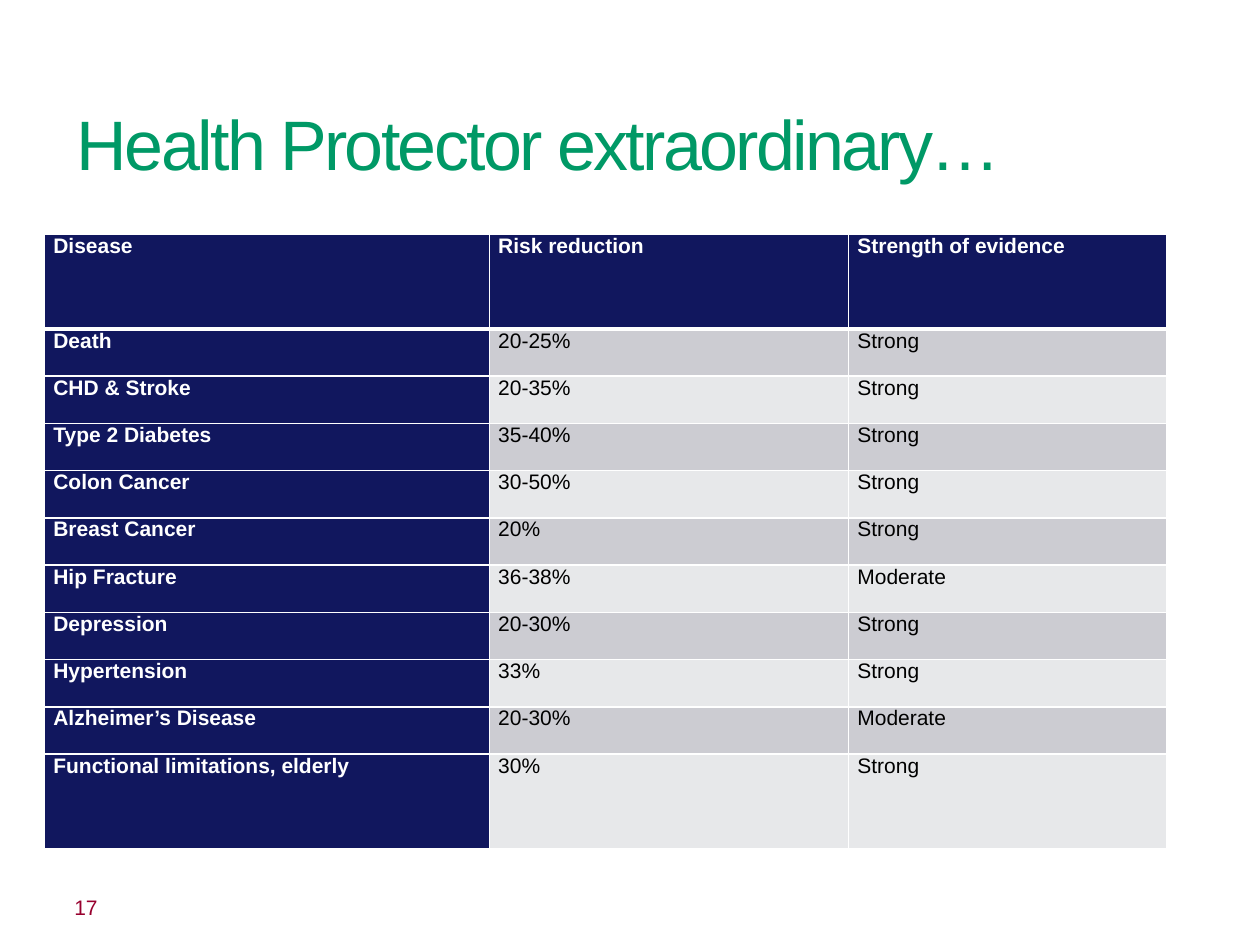
from dataclasses import dataclass

from lxml.etree import SubElement
from pptx import Presentation
from pptx.dml.color import RGBColor as Color
from pptx.enum.shapes import MSO_SHAPE as Shape
from pptx.enum.text import MSO_ANCHOR as Anchor, PP_ALIGN as Align
from pptx.oxml.ns import qn
from pptx.util import Pt


@dataclass(frozen=True)
class Theme:
    font: str = "Arial"
    title: str = "009966"
    navy: str = "11175E"
    bands: tuple = ("CCCCD2", "E7E8EA")
    white: str = "FFFFFF"
    black: str = "000000"
    number: str = "98002E"
    title_size: int = 40
    body_size: int = 12
    rule: int = 1
    header_rule: int = 3


THEME = Theme()
HEADER = ("Disease", "Risk reduction", "Strength of evidence")
EVIDENCE = (
    ("Death", "20-25%", "Strong"),
    ("CHD & Stroke", "20-35%", "Strong"),
    ("Type 2 Diabetes", "35-40%", "Strong"),
    ("Colon Cancer", "30-50%", "Strong"),
    ("Breast Cancer", "20%", "Strong"),
    ("Hip Fracture", "36-38%", "Moderate"),
    ("Depression", "20-30%", "Strong"),
    ("Hypertension", "33%", "Strong"),
    ("Alzheimer’s Disease", "20-30%", "Moderate"),
    ("Functional limitations, elderly", "30%", "Strong"),
)
COLUMN_SHARES = (3.53, 2.85, 2.52)


def style_font(para, size, color, bold=False):
    font = para.font
    font.name, font.size, font.bold = THEME.font, Pt(size), bold
    font.color.rgb = Color.from_string(color)


def set_margins(target, left=0, right=0):
    target.margin_left, target.margin_right = Pt(left), Pt(right)
    target.margin_top = target.margin_bottom = 0


def fill_solid(target, color):
    target.fill.solid()
    target.fill.fore_color.rgb = Color.from_string(color)


def add_borders(cell, top, bottom):
    """Rule all four sides; call before the cell is filled."""
    properties = cell._tc.get_or_add_tcPr()
    widths = {"lnL": THEME.rule, "lnR": THEME.rule, "lnT": top, "lnB": bottom}
    for side, width in widths.items():
        line = SubElement(properties, qn(f"a:{side}"), w=str(Pt(width)))
        fill = SubElement(line, qn("a:solidFill"))
        SubElement(fill, qn("a:srgbClr"), val=THEME.white)


def place_title(page, text, left, top, width, height):
    title = page.shapes.title
    title.left, title.top, title.width, title.height = map(Pt, (left, top, width, height))
    frame = title.text_frame
    set_margins(frame)
    frame.word_wrap = True
    frame.vertical_anchor = Anchor.BOTTOM
    para = frame.paragraphs[0]
    para.alignment = Align.LEFT
    span = para.add_run()
    span.text = text
    span.font._element.set("spc", "-150")
    style_font(para, THEME.title_size, THEME.title)


def add_evidence_table(page, left, top, width, height):
    """The first and last rows are twice as tall as the others."""
    rows = (HEADER, *EVIDENCE)
    last = len(rows) - 1
    unit = height / (len(rows) + 2)
    table = page.shapes.add_table(
        len(rows), len(HEADER), Pt(left), Pt(top), Pt(width), Pt(height)).table
    for column, share in zip(table.columns, COLUMN_SHARES):
        column.width = Pt(width * share / sum(COLUMN_SHARES))
    for r, values in enumerate(rows):
        table.rows[r].height = Pt(unit * 2 if r in (0, last) else unit)
        for c, value in enumerate(values):
            cell = table.cell(r, c)
            heading = r == 0 or c == 0
            add_borders(cell,
                        top=THEME.header_rule if r == 1 else THEME.rule,
                        bottom=THEME.header_rule if r == 0 else THEME.rule)
            fill_solid(cell, THEME.navy if heading else THEME.bands[(r - 1) % 2])
            set_margins(cell, 5, 5)
            cell.text = value
            style_font(cell.text_frame.paragraphs[0], THEME.body_size,
                       THEME.white if heading else THEME.black, bold=heading)


def add_number_strip(page, number, left, top, width, height):
    strip = page.shapes.add_shape(
        Shape.RECTANGLE, Pt(left), Pt(top), Pt(width), Pt(height))
    strip.shadow.inherit = False
    fill_solid(strip, THEME.white)
    strip.line.fill.background()
    frame = strip.text_frame
    set_margins(frame, left=42.5, right=7.2)
    frame.vertical_anchor = Anchor.MIDDLE
    para = frame.paragraphs[0]
    para.text = number
    para.alignment = Align.LEFT
    style_font(para, THEME.body_size, THEME.number)


def main():
    deck = Presentation()
    deck.slide_width, deck.slide_height = Pt(720), Pt(540)
    page = deck.slides.add_slide(deck.slide_layouts[5])
    place_title(page, "Health Protector extraordinary…", 44, 54.7, 632, 51)
    add_evidence_table(page, 25.5, 134, 641, 351)
    add_number_strip(page, "17", 0, 497, 720, 43)
    deck.save("out.pptx")


if __name__ == "__main__":
    main()
